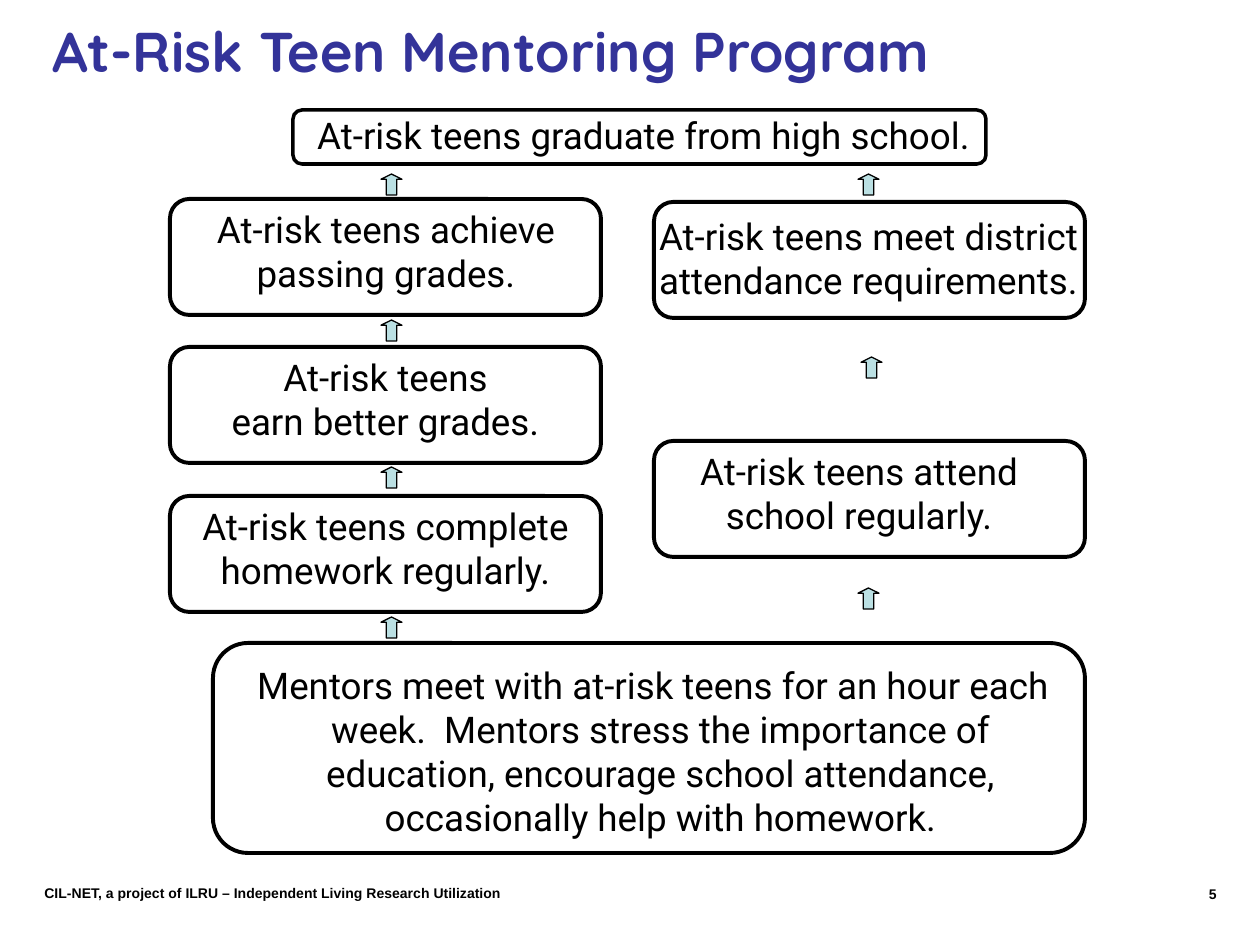
from dataclasses import dataclass

from pptx import Presentation
from pptx.dml.color import RGBColor
from pptx.enum.shapes import MSO_SHAPE
from pptx.enum.text import MSO_ANCHOR, PP_ALIGN
from pptx.util import Pt

PX = 7257.143  # EMU in one px, at 126 px to the inch
RECTANGLE, ROUNDED, UP_ARROW = MSO_SHAPE.RECTANGLE, MSO_SHAPE.ROUNDED_RECTANGLE, MSO_SHAPE.UP_ARROW
LEFT, CENTER, RIGHT = PP_ALIGN.LEFT, PP_ALIGN.CENTER, PP_ALIGN.RIGHT
MIDDLE = MSO_ANCHOR.MIDDLE


@dataclass(frozen=True)
class Theme:
    title: RGBColor = RGBColor(0x33, 0x33, 0x99)
    ink: RGBColor = RGBColor(0, 0, 0)
    paper: RGBColor = RGBColor(255, 255, 255)
    arrow: RGBColor = RGBColor(0xBB, 0xE0, 0xE3)
    title_size: float = 32
    body_size: float = 21
    footer_size: float = 8


THEME = Theme()
TITLE = {"name": "Quicksand", "size": Pt(THEME.title_size), "bold": True}
BODY = {"name": "Roboto", "size": Pt(THEME.body_size)}
FOOTER = {"name": "Arial", "size": Pt(THEME.footer_size), "bold": True}


def emu(length):
    return round(length * PX)


def place(box):
    return [emu(length) for length in box]


def set_format(target, values):
    for name, value in values.items():
        setattr(target, name, value)


def write(shape, lines, font, color, align):
    frame = shape.text_frame
    frame.word_wrap = True
    for index, line in enumerate(lines):
        paragraph = frame.paragraphs[0] if index == 0 else frame.add_paragraph()
        paragraph.text = line
        paragraph.alignment = align
        set_format(paragraph.font, font)
        paragraph.font.color.rgb = color


def add_text(slide, box, text, font, color, align=LEFT):
    write(slide.shapes.add_textbox(*place(box)), [text], font, color, align)


def add_outline(slide, kind, box, line_color, width, fill=None):
    shape = slide.shapes.add_shape(kind, *place(box))
    shape.shadow.inherit = False
    shape.line.color.rgb = line_color
    shape.line.width = Pt(width)
    if fill is None:
        shape.fill.background()
    else:
        shape.fill.solid()
        shape.fill.fore_color.rgb = fill
    return shape


def add_label(slide, box, lines, side=6, margin=0, indent=0):
    label = add_outline(slide, RECTANGLE, box, THEME.paper, 1)
    set_format(label.text_frame, {
        "vertical_anchor": MIDDLE, "margin_left": emu(side), "margin_right": emu(side),
        "margin_top": emu(6), "margin_bottom": emu(6)})
    write(label, lines, BODY, THEME.ink, CENTER)
    if indent:
        properties = label.text_frame.paragraphs[0]._p.get_or_add_pPr()
        properties.set("marL", str(emu(margin)))
        properties.set("indent", str(emu(indent)))


def add_step(slide, box, label_offset, lines, width=2.25, **label_format):
    """A rounded frame around its label; label_offset is relative to the frame."""
    left, top, _, _ = box
    x, y, label_width, label_height = label_offset
    add_label(slide, (left + x, top + y, label_width, label_height), lines, **label_format)
    add_outline(slide, ROUNDED, box, THEME.ink, width)


def add_arrows(slide, points):
    for left, top in points:
        arrow = add_outline(slide, UP_ARROW, (left, top, 21, 21), THEME.ink, 0.75, THEME.arrow)
        arrow.adjustments[1] = 0.25


def add_column(slide, left, steps):
    for top, label_offset, lines, label_format in steps:
        add_step(slide, (left, top, 431, 116), label_offset, lines, **label_format)


def add_footer(slide, left, top, width):
    add_text(slide, (left, top, 630, 29),
             "CIL-NET, a project of ILRU – Independent Living Research Utilization",
             FOOTER, THEME.ink)
    add_text(slide, (left + width - 84, top + 1, 84, 34), "5", FOOTER, THEME.ink, RIGHT)


def main():
    presentation = Presentation()
    presentation.slide_width, presentation.slide_height = emu(1260), emu(945)
    slide = presentation.slides.add_slide(presentation.slide_layouts[6])

    # Title and footer
    add_text(slide, (40, 10, 1023, 81), "At-Risk Teen Mentoring Program", TITLE, THEME.title)
    add_footer(slide, 32, 878, 1197)

    # Mentoring activity at the base
    add_step(slide, (213, 643, 872, 210), (20, 13, 840, 190), [
        "Mentors meet with at-risk teens for an hour each week.  Mentors stress the "
        "importance of education, encourage school attendance, occasionally help with homework."],
        side=13, margin=15, indent=-15)

    # Grades on the left, attendance on the right
    add_column(slide, 170, [
        (199, (22, 1, 388, 102), ["At-risk teens achieve", "passing grades."], {}),
        (347, (0, 1, 431, 102), ["At-risk teens", "earn better grades."], {"indent": -20}),
        (496, (0, 1, 431, 102), ["At-risk teens complete homework regularly."], {}),
    ])
    add_column(slide, 654, [
        (202, (-11, 5, 451, 102), ["At-risk teens meet district attendance requirements."], {}),
        (441, (0, 1, 410, 102), ["At-risk teens attend school regularly."], {}),
    ])

    # Goal at the top
    add_step(slide, (293, 110, 693, 54), (-17, -4, 735, 57),
             ["At-risk teens graduate from high school."], width=2)

    # Arrows from each step to the next
    add_arrows(slide, [(381, top) for top in (174, 320, 467, 617)])
    add_arrows(slide, [(858, 174), (861, 357), (858, 588)])

    presentation.save("out.pptx")


if __name__ == "__main__":
    main()
